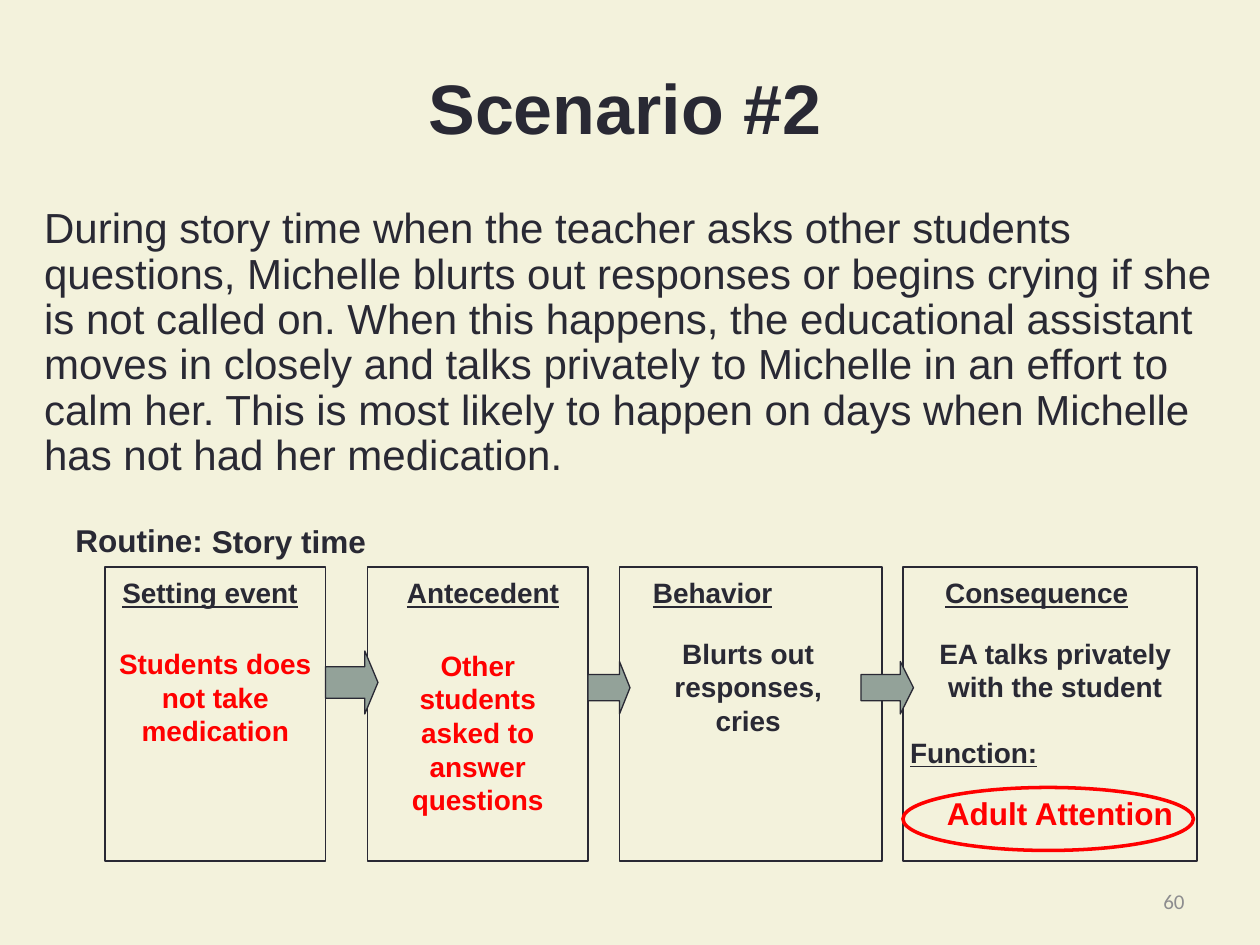
from pptx import Presentation
from pptx.dml.color import RGBColor
from pptx.enum import shapes, text
from pptx.util import Pt
from lxml import etree

COLORS = {"paper": "F3F2DC", "ink": "292934", "arrow": "93A299", "red": "FF0000", "number": "8D8D8F"}
LEFT, CENTER, RIGHT = text.PP_ALIGN.LEFT, text.PP_ALIGN.CENTER, text.PP_ALIGN.RIGHT

TITLE = "Scenario #2"
STORY = (
    "During story time when the teacher asks other students questions, Michelle blurts out "
    "responses or begins crying if she is not called on. When this happens, the educational "
    "assistant moves in closely and talks privately to Michelle in an effort to calm her. This is "
    "most likely to happen on days when Michelle has not had her medication."
)
ROUTINE = [("Routine:", 36, 294), ("Story time", 114, 295)]
FUNCTION = "Function:"
FUNCTION_ANSWER = "Adult Attention"
PAGE_NUMBER = "60"

STAGES = [
    {"box": (60, 126), "heading": ("Setting event", 57, CENTER),
     "answer": ("Students does not take medication", 60, 366, 126, "red")},
    {"box": (210, 126), "heading": ("Antecedent", 213, CENTER),
     "answer": ("Other students asked to answer questions", 222, 367, 102, "red")},
    {"box": (354, 150), "heading": ("Behavior", 366, LEFT),
     "answer": ("Blurts out responses, cries", 370, 360, 115, "ink")},
    {"box": (516, 168), "heading": ("Consequence", 533, LEFT),
     "answer": ("EA talks privately with the student", 513, 360, 180, "ink")},
]
ARROWS = [(186, 372, 30, 36), (336, 378, 24, 30), (492, 378, 30, 30)]
BOX_TOP, BOX_HEIGHT = 324, 168
HEADING_TOP, HEADING_WIDTH = 325.5, 126
ELLIPSE = (516, 450, 166, 36)


def rgb(name):
    return RGBColor.from_string(COLORS[name])


def place(item, left, top, width, height):
    item.left, item.top, item.width, item.height = Pt(left), Pt(top), Pt(width), Pt(height)


def style(paragraph, size, color="ink", bold=True, align=LEFT, underline=False, face="Arial"):
    font = paragraph.font
    font.name, font.size, font.bold, font.underline = face, Pt(size), bold, underline
    font.color.rgb = rgb(color)
    paragraph.alignment = align


def add_text(slide, words, left, top, width, height, size, **look):
    frame = slide.shapes.add_textbox(Pt(left), Pt(top), Pt(width), Pt(height)).text_frame
    frame.word_wrap = True
    frame.text = words
    style(frame.paragraphs[0], size, **look)
    return frame


def add_outline(slide, kind, bounds, line="ink", weight=0.75, fill=None):
    outline = slide.shapes.add_shape(kind, *map(Pt, bounds))
    outline.shadow.inherit = False
    if fill:
        outline.fill.solid()
        outline.fill.fore_color.rgb = rgb(fill)
    else:
        outline.fill.background()
    outline.line.color.rgb = rgb(line)
    outline.line.width = Pt(weight)
    return outline


def fill_placeholders(slide):
    title = slide.shapes.title
    place(title, 12, 36, 690, 50)
    title.text = TITLE
    title.text_frame.vertical_anchor = text.MSO_ANCHOR.MIDDLE
    style(title.text_frame.paragraphs[0], 40, align=CENTER)

    story = slide.placeholders[1]
    place(story, 18, 115, 690, 170)
    story.text = STORY
    paragraph = story.text_frame.paragraphs[0]
    style(paragraph, 24, bold=False)
    paragraph.line_spacing = 0.9
    paragraph.space_before = Pt(0)
    properties = paragraph._p.get_or_add_pPr()
    properties.set("marL", "0")
    properties.set("indent", "0")
    no_bullet = etree.Element("{http://schemas.openxmlformats.org/drawingml/2006/main}buNone")
    properties.find("{*}defRPr").addprevious(no_bullet)


def add_stages(slide):
    for stage in STAGES:
        left, width = stage["box"]
        add_outline(slide, shapes.MSO_SHAPE.RECTANGLE, (left, BOX_TOP, width, BOX_HEIGHT))
    for bounds in ARROWS:
        arrow = add_outline(slide, shapes.MSO_SHAPE.RIGHT_ARROW, bounds, fill="arrow")
        arrow.adjustments[0], arrow.adjustments[1] = 0.5, 0.25
    for stage in STAGES:
        heading, left, align = stage["heading"]
        add_text(slide, heading, left, HEADING_TOP, HEADING_WIDTH, 27, 16, align=align, underline=True)
        answer, left, top, width, color = stage["answer"]
        consequence = add_text(slide, answer, left, top, width, 66, 16, color=color, align=CENTER)
    function = consequence.add_paragraph()
    function.text = FUNCTION
    function.space_before = Pt(18.4)
    style(function, 16, underline=True)


def main():
    deck = Presentation()
    deck.slide_width, deck.slide_height = Pt(720), Pt(540)
    slide = deck.slides.add_slide(deck.slide_layouts[1])
    slide.background.fill.solid()
    slide.background.fill.fore_color.rgb = rgb("paper")
    fill_placeholders(slide)
    add_stages(slide)
    for words, left, top in ROUTINE:
        add_text(slide, words, left, top, 240, 29, 18)
    add_outline(slide, shapes.MSO_SHAPE.OVAL, ELLIPSE, line="red", weight=2)
    add_text(slide, FUNCTION_ANSWER, 534, 450, 148, 29, 18, color="red")
    number = add_text(slide, PAGE_NUMBER, 516, 500.5, 168, 29, 12,
                      color="number", bold=False, align=RIGHT, face="Calibri")
    number.vertical_anchor = text.MSO_ANCHOR.MIDDLE
    deck.save("out.pptx")


if __name__ == "__main__":
    main()
